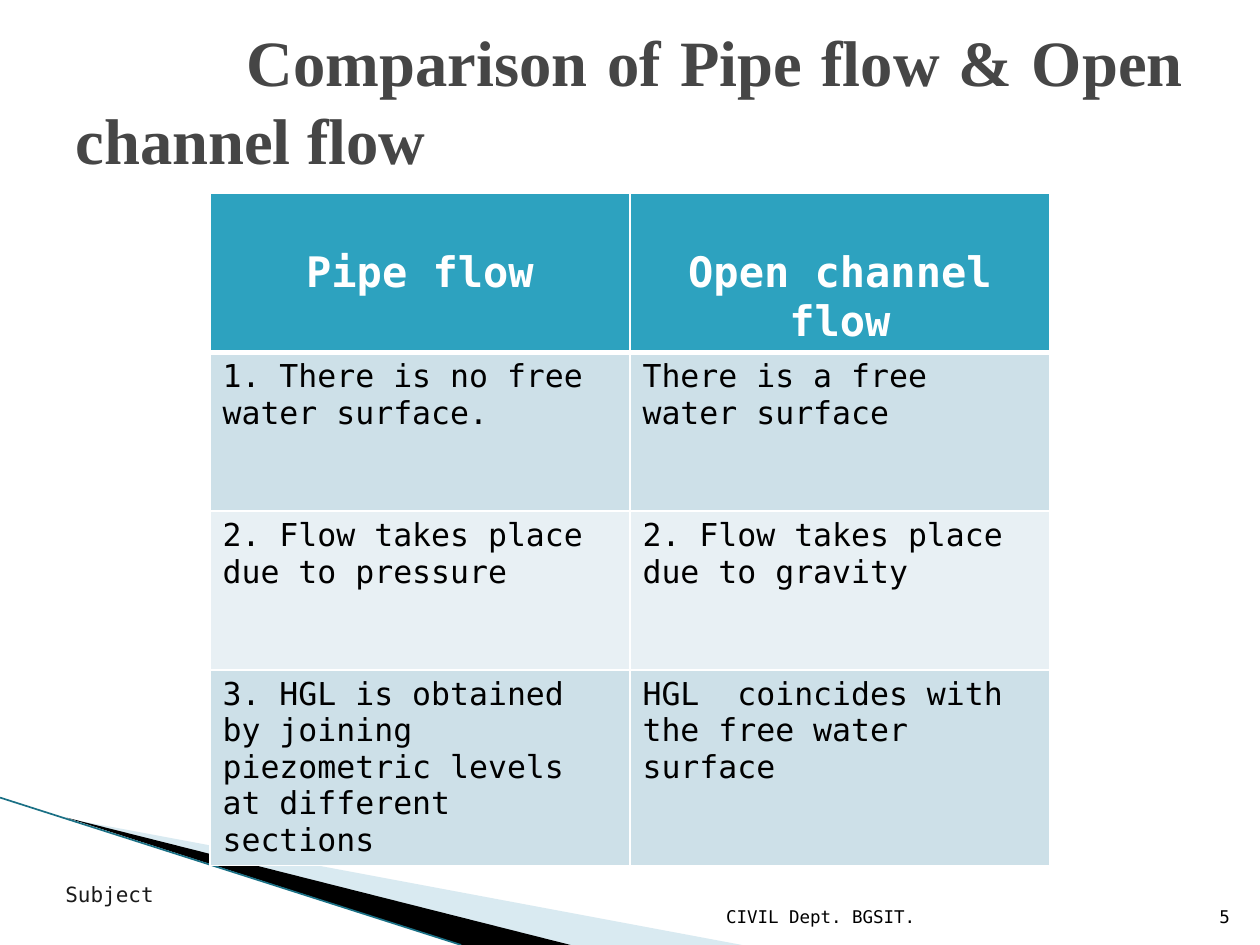
from dataclasses import dataclass

from lxml import etree
from pptx import Presentation
from pptx import util as u
from pptx.dml.color import RGBColor
from pptx.enum import shapes, text
from pptx.oxml.ns import qn


@dataclass(frozen=True)
class Theme:
    mono: str = "DejaVu Sans Mono"
    serif: str = "Times New Roman"
    title: str = "464646"
    header: str = "2DA2BF"
    bands: tuple = ("CDE0E8", "E8F0F4")
    white: str = "FFFFFF"
    black: str = "000000"
    subject: str = "1A1A1A"
    wedge: str = "A0CBDC"
    edge: str = "1A7085"
    title_size: float = 36.9
    header_size: float = 24
    body_size: float = 18
    subject_size: float = 12
    footer_size: float = 10


THEME = Theme()
WIDTH, HEIGHT = 10, 7.5

TITLE = "Comparison of Pipe flow & Open channel flow"
ROWS = [
    ("Pipe flow", "Open channel flow"),
    ("1. There is no free water surface.", "There is a free water surface"),
    ("2. Flow takes place due to pressure", "2. Flow takes place due to gravity"),
    ("3. HGL is obtained by joining piezometric levels at different sections",
     "HGL  coincides with the free water surface"),
]
LEFT, MIDDLE, BOTTOM = text.PP_ALIGN.LEFT, text.MSO_ANCHOR.MIDDLE, text.MSO_ANCHOR.BOTTOM
RIGHT = text.PP_ALIGN.RIGHT
LABELS = [
    ("Subject", (0.42, 6.92, 4, 0.36), LEFT, MIDDLE, THEME.subject_size, THEME.subject),
    ("5", (9.46, 7.01, 0.4, 0.4), RIGHT, BOTTOM, THEME.footer_size, THEME.black),
    ("CIVIL Dept. BGSIT.", (4.79, 7.01, 2.57, 0.4), RIGHT, BOTTOM,
     THEME.footer_size, THEME.black),
]
WEDGES = [
    ([(0.55, 6.5), (5.89, HEIGHT), (4.52, HEIGHT)], (0.78, 5.47, 4.16, 1.58),
     THEME.wedge, 40),
    ([(0.53, 6.49), (4.53, HEIGHT), (3.66, HEIGHT)], (-0.06, 6.33, 4.16, 0.92),
     THEME.black, 100),
]


def colour(value):
    return RGBColor.from_string(value)


def style(para, size, value, face=THEME.mono, bold=False, align=LEFT):
    para.alignment = align
    para.font.name = face
    para.font.size = u.Pt(size)
    para.font.bold = bold
    para.font.color.rgb = colour(value)


def set_frame(wedge, frame):
    left, top, width, height = map(u.Inches, frame)
    outline = next(wedge.element.iter(qn("a:path")))
    outline.set("w", str(width))
    outline.set("h", str(height))
    for point in outline.iter(qn("a:pt")):
        point.set("x", str(int(point.get("x")) + wedge.left - left))
        point.set("y", str(int(point.get("y")) + wedge.top - top))
    wedge.left, wedge.top, wedge.width, wedge.height = left, top, width, height


def add_wedge(page, points, frame, value, opacity):
    corners = [(u.Inches(x), u.Inches(y)) for x, y in points]
    builder = page.shapes.build_freeform(*corners[0])
    builder.add_line_segments(corners[1:], close=True)
    wedge = builder.convert_to_shape()
    set_frame(wedge, frame)
    wedge.shadow.inherit = False
    wedge.fill.solid()
    wedge.fill.fore_color.rgb = colour(value)
    wedge.line.fill.background()
    if opacity < 100:
        fill = wedge.element.spPr.find(qn("a:solidFill"))
        etree.SubElement(fill[0], qn("a:alpha"), val=str(opacity * 1000))


def add_edge(page):
    ends = [u.Inches(n) for n in (0, 6.33, 3.66, HEIGHT)]
    edge = page.shapes.add_connector(shapes.MSO_CONNECTOR.STRAIGHT, *ends)
    edge.line.color.rgb = colour(THEME.edge)
    edge.line.width = u.Pt(0.95)
    etree.SubElement(edge.element.spPr, qn("a:effectLst"))


def add_label(page, words, place, align, anchor, size, value):
    box = page.shapes.add_textbox(*map(u.Inches, place))
    frame = box.text_frame
    frame.word_wrap = True
    frame.vertical_anchor = anchor
    frame.text = words
    style(frame.paragraphs[0], size, value, align=align)


def set_title(page):
    title = page.shapes.title
    title.left, title.top, title.width, title.height = map(u.Inches, (0.5, 0.25, 9, 1.08))
    frame = title.text_frame
    frame.word_wrap = True
    frame.auto_size = text.MSO_AUTO_SIZE.NONE
    frame.vertical_anchor = MIDDLE
    frame.text = TITLE
    para = frame.paragraphs[0]
    para._p.get_or_add_pPr().set("indent", str(u.Inches(1.36)))
    style(para, THEME.title_size, THEME.title, THEME.serif, True, text.PP_ALIGN.JUSTIFY)


def set_borders(cell, heavy):
    properties = cell._tc.get_or_add_tcPr()
    for index, side in enumerate(("lnL", "lnR", "lnT", "lnB")):
        points = 3 if side == heavy else 1
        line = etree.Element(qn(f"a:{side}"), w=str(u.Pt(points)))
        fill = etree.SubElement(line, qn("a:solidFill"))
        etree.SubElement(fill, qn("a:srgbClr"), val=THEME.white)
        properties.insert(index, line)


def add_comparison(page):
    place = (WIDTH / 6, 1.53, WIDTH * 2 / 3, 5.04)
    table = page.shapes.add_table(len(ROWS), 2, *map(u.Inches, place)).table
    for r, row in enumerate(ROWS):
        header = r == 0
        for c, words in enumerate(row):
            cell = table.cell(r, c)
            cell.text = words
            cell.fill.solid()
            cell.fill.fore_color.rgb = colour(
                THEME.header if header else THEME.bands[(r - 1) % 2])
            set_borders(cell, {0: "lnB", 1: "lnT"}.get(r))
            para = cell.text_frame.paragraphs[0]
            if header:
                cell.margin_top = u.Inches(0.44)
                style(para, THEME.header_size, THEME.white, bold=True,
                      align=text.PP_ALIGN.CENTER)
            else:
                style(para, THEME.body_size, THEME.black)


def main():
    deck = Presentation()
    deck.slide_width, deck.slide_height = u.Inches(WIDTH), u.Inches(HEIGHT)
    page = deck.slides.add_slide(deck.slide_layouts.get_by_name("Title Only"))
    for wedge in WEDGES:
        add_wedge(page, *wedge)
    add_edge(page)
    set_title(page)
    add_comparison(page)
    for label in LABELS:
        add_label(page, *label)
    deck.save("out.pptx")


if __name__ == "__main__":
    main()
